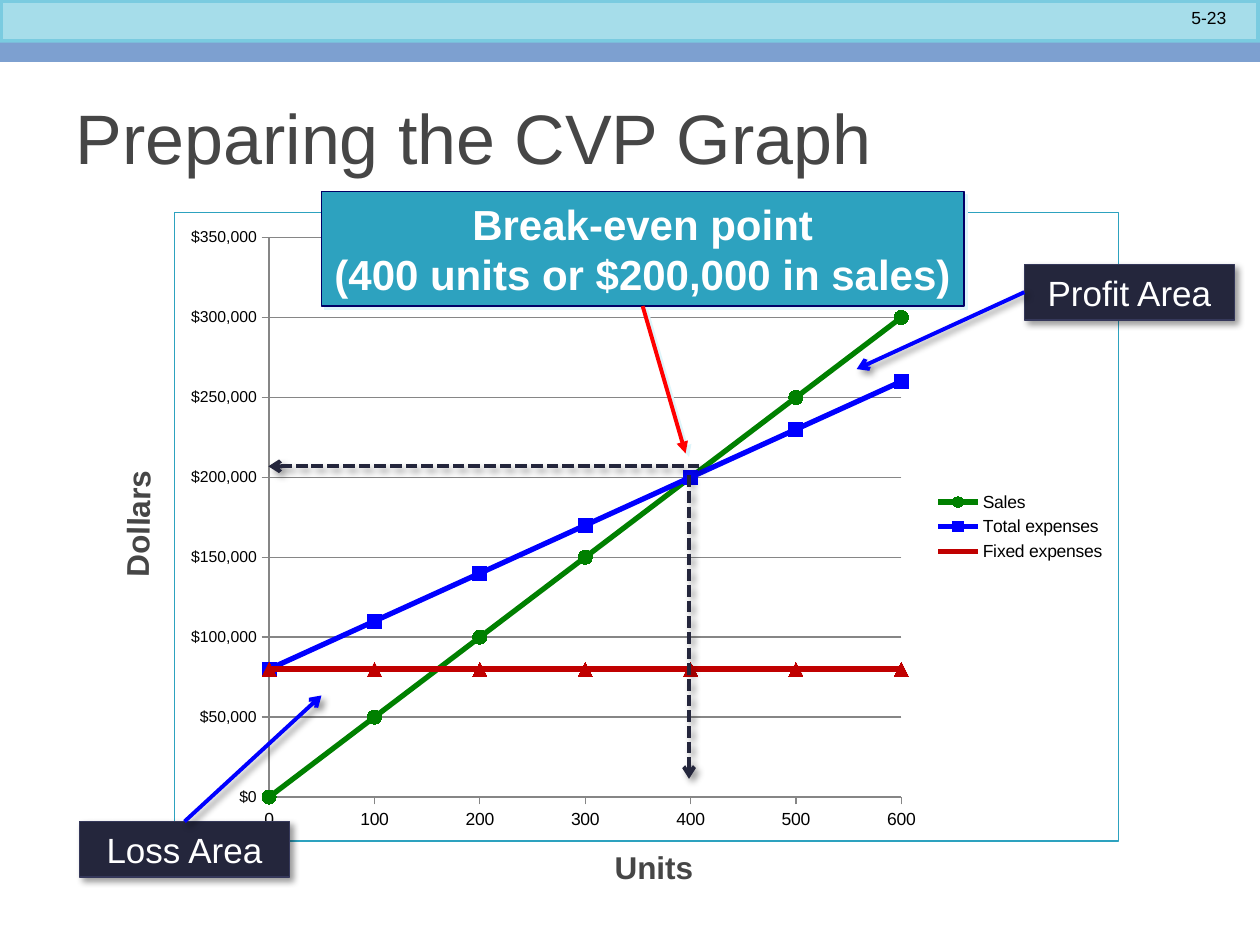
from dataclasses import dataclass

from lxml.etree import SubElement
from pptx import Presentation
from pptx.chart.data import CategoryChartData
from pptx.dml.color import RGBColor
from pptx.enum.chart import XL_CHART_TYPE, XL_LEGEND_POSITION, XL_MARKER_STYLE, XL_TICK_MARK
from pptx.enum.dml import MSO_LINE
from pptx.enum.shapes import MSO_CONNECTOR, MSO_SHAPE
from pptx.enum.text import MSO_ANCHOR, PP_ALIGN
from pptx.oxml import parse_xml
from pptx.oxml.ns import nsdecls, qn
from pptx.util import Cm, Pt


@dataclass(frozen=True)
class Theme:
    """Colours, font and type sizes of the slide."""

    font: str = "Arial"
    title_size: int = 40
    callout_size: int = 24
    area_size: int = 20
    axis_title_size: int = 18
    small_size: int = 10
    value_size: int = 9
    black: str = "000000"
    white: str = "FFFFFF"
    text: str = "464646"
    header: str = "A6DDEA"
    header_border: str = "7ACBE0"
    band: str = "7DA0D0"
    teal: str = "2DA2BF"
    callout_border: str = "000066"
    dark: str = "24263C"
    dark_border: str = "35385A"
    grid: str = "868686"
    sales: str = "008000"
    expenses: str = "0000FF"
    fixed: str = "C00000"
    pointer: str = "FF0000"
    glow: tuple = ("DEF5FA", 100, 0, 2.8)
    drop: tuple = ("000000", 40, 4, 3)


def colour(value):
    """Turn a hex string into a colour."""
    return RGBColor.from_string(value)


def apply(target, values):
    """Set each attribute named in values on target."""
    for name, value in values.items():
        setattr(target, name, value)


class SlideBuilder:
    """Adds styled elements to one slide."""

    def __init__(self, slide, theme):
        """Keep the slide and its theme."""
        self.slide = slide
        self.theme = theme

    def style_text(self, frame, text, size, shade, bold=False, align=PP_ALIGN.LEFT, wrap=True):
        """Write text into a frame with one format."""
        apply(frame, {"text": text, "word_wrap": wrap, "vertical_anchor": MSO_ANCHOR.MIDDLE})
        for paragraph in frame.paragraphs:
            paragraph.alignment = align
            for run in paragraph.runs:
                apply(run.font, {"name": self.theme.font, "size": Pt(size), "bold": bold})
                run.font.color.rgb = colour(shade)

    def style_line(self, line, shade, width):
        """Give a line its colour and width."""
        line.color.rgb = colour(shade)
        line.width = Pt(width)

    def style_shadow(self, shape, shadow=None):
        """Replace the theme shadow by the given one, or by none."""
        effects = SubElement(shape._element.spPr, qn("a:effectLst"))
        if shadow:
            shade, alpha, blur, distance = shadow
            outer = SubElement(effects, qn("a:outerShdw"), blurRad=str(Pt(blur)),
                               dist=str(Pt(distance)), dir="2700000", algn="tl", rotWithShape="0")
            fill = SubElement(outer, qn("a:srgbClr"), val=shade)
            SubElement(fill, qn("a:alpha"), val=str(alpha * 1000))

    def title(self, text, box):
        """Place and format the title placeholder."""
        title = self.slide.shapes.title
        apply(title, dict(zip(("left", "top", "width", "height"), map(Cm, box))))
        self.style_text(title.text_frame, text, self.theme.title_size, self.theme.text)

    def rectangle(self, box, fill, border=None, width=0.75, shadow=None):
        """Add a filled rectangle."""
        shape = self.slide.shapes.add_shape(MSO_SHAPE.RECTANGLE, *map(Cm, box))
        shape.fill.solid()
        shape.fill.fore_color.rgb = colour(fill)
        if border:
            self.style_line(shape.line, border, width)
        else:
            shape.line.fill.background()
        self.style_shadow(shape, shadow)
        return shape

    def text(self, text, box, size, shade, rotation=0, **style):
        """Add a text box."""
        shape = self.slide.shapes.add_textbox(*map(Cm, box))
        shape.rotation = rotation
        self.style_text(shape.text_frame, text, size, shade, **style)

    def arrow(self, start, end, shade, head="arrow", shadow=None, dash=None, source=None, site=0):
        """Add an arrow, joined to a source shape if there is one."""
        connector = self.slide.shapes.add_connector(MSO_CONNECTOR.STRAIGHT, *map(Cm, start + end))
        if source is not None:
            connector.begin_connect(source, site)
        self.style_line(connector.line, shade, 2.25)
        if dash:
            connector.line.dash_style = dash
        SubElement(connector.line._get_or_add_ln(), qn("a:tailEnd"), type=head)
        self.style_shadow(connector, shadow)

    def area_label(self, text, left, top, start, end, site):
        """Add a dark label with an arrow to its area."""
        theme = self.theme
        label = self.rectangle((left, top, 4.24, 1.12), theme.dark, theme.dark_border,
                               shadow=theme.drop)
        self.style_text(label.text_frame, text, theme.area_size, theme.white, align=PP_ALIGN.CENTER)
        self.arrow(start, end, theme.expenses, shadow=theme.drop, source=label, site=site)

    def line_chart(self, box, categories, series):
        """Add the line chart with its axes and legend."""
        theme = self.theme
        data = CategoryChartData()
        data.categories = categories
        for name, values, _, _ in series:
            data.add_series(name, values)
        chart = self.slide.shapes.add_chart(XL_CHART_TYPE.LINE_MARKERS, *map(Cm, box), data).chart
        apply(chart, {"has_title": False, "has_legend": True})
        apply(chart.font, {"name": theme.font, "size": Pt(theme.small_size)})
        chart.font.color.rgb = colour(theme.black)
        chart.plots[0].vary_by_categories = False
        for line, (_, _, shade, marker) in zip(chart.plots[0].series, series):
            line.smooth = False
            self.style_line(line.format.line, shade, 3)
            apply(line.marker, {"style": marker, "size": 8})
            line.marker.format.fill.solid()
            line.marker.format.fill.fore_color.rgb = colour(shade)
            line.marker.format.line.color.rgb = colour(shade)
        value_axis = chart.value_axis
        apply(value_axis, {"minimum_scale": 0, "maximum_scale": 350000, "major_unit": 50000,
                           "has_major_gridlines": True})
        apply(value_axis.tick_labels, {"number_format": '"$"#,##0', "number_format_is_linked": False})
        value_axis.tick_labels.font.size = Pt(theme.value_size)
        value_axis._element.find(qn("c:majorUnit")).addprevious(
            parse_xml(f'<c:crossBetween {nsdecls("c")} val="midCat"/>'))
        self.style_line(value_axis.major_gridlines.format.line, theme.grid, 0.75)
        for axis in (value_axis, chart.category_axis):
            axis.major_tick_mark = XL_TICK_MARK.OUTSIDE
            self.style_line(axis.format.line, theme.grid, 0.75)
        apply(chart.legend, {"position": XL_LEGEND_POSITION.RIGHT, "include_in_layout": False})
        chart.legend._element.find(qn("c:legendPos")).addnext(parse_xml(
            f'<c:legendEntry {nsdecls("c")}><c:idx val="2"/><c:delete val="1"/></c:legendEntry>'))
        self.chart_frame(chart, {"x": 0.1, "y": 0.04, "w": 0.67, "h": 0.89})

    def chart_frame(self, chart, plot_box):
        """Fix the plot area and give the chart its fill and border."""
        theme = self.theme
        plot_area = chart._chartSpace.chart.plotArea
        for old in plot_area.findall(qn("c:layout")):
            plot_area.remove(old)
        sizes = "".join(f'<c:{key} val="{value}"/>' for key, value in plot_box.items())
        plot_area.insert(0, parse_xml(
            f'<c:layout {nsdecls("c")}><c:manualLayout><c:layoutTarget val="inner"/>'
            f'<c:xMode val="edge"/><c:yMode val="edge"/>{sizes}</c:manualLayout></c:layout>'))
        chart._chartSpace.chart.addnext(parse_xml(
            f'<c:spPr {nsdecls("c", "a")}><a:solidFill><a:srgbClr val="{theme.white}"/></a:solidFill>'
            f'<a:ln w="{Pt(0.75)}"><a:solidFill><a:srgbClr val="{theme.teal}"/></a:solidFill></a:ln></c:spPr>'))


def main():
    """Build and save the slide."""
    theme = Theme()
    presentation = Presentation()
    apply(presentation, {"slide_width": Cm(25.4), "slide_height": Cm(19.05)})
    builder = SlideBuilder(presentation.slides.add_slide(presentation.slide_layouts[5]), theme)

    builder.rectangle((0, 0, 25.4, 0.86), theme.header, theme.header_border, 4)
    builder.rectangle((0, 1.02, 25.4, 0.23), theme.band)
    builder.rectangle((0, 0.86, 25.4, 0.25), theme.band)
    builder.text("5-23", (21.59, 0, 3.38, 0.69), theme.small_size, theme.black, align=PP_ALIGN.RIGHT)
    builder.title("Preparing the CVP Graph", (1.27, 1.27, 22.86, 2.97))

    units = range(0, 700, 100)
    builder.line_chart((3.51, 4.27, 19.05, 12.7), [str(unit) for unit in units], [
        ("Sales", [500 * unit for unit in units], theme.sales, XL_MARKER_STYLE.CIRCLE),
        ("Total expenses", [80000 + 300 * unit for unit in units], theme.expenses,
         XL_MARKER_STYLE.SQUARE),
        ("Series 3", [80000 for _ in units], theme.fixed, XL_MARKER_STYLE.TRIANGLE),
        ("Fixed expenses", [0], theme.fixed, XL_MARKER_STYLE.NONE),
    ])

    callout = builder.rectangle((6.48, 3.86, 12.95, 2.31), theme.teal, theme.callout_border, 1,
                                theme.glow)
    builder.style_text(callout.text_frame, "Break-even point\v(400 units or $200,000 in sales)",
                       theme.callout_size, theme.white, True, PP_ALIGN.CENTER, False)
    builder.arrow((12.95, 6.17), (13.82, 9.14), theme.pointer, "triangle", theme.glow,
                  source=callout, site=2)
    axis_title = {"size": theme.axis_title_size, "shade": theme.text, "bold": True}
    builder.text("Units", (12.14, 16.97, 2.11, 1.02), wrap=False, **axis_title)
    builder.text("Dollars", (1.35, 9.96, 2.84, 1.02), rotation=271, **axis_title)
    for start, end in (((13.89, 9.58), (13.89, 15.7)), ((14.1, 9.4), (5.41, 9.4))):
        builder.arrow(start, end, theme.dark, shadow=theme.drop, dash=MSO_LINE.SQUARE_DOT)
    builder.area_label("Loss Area", 1.6, 16.56, (3.72, 16.56), (6.48, 14.02), 0)
    builder.area_label("Profit Area", 20.65, 5.33, (20.65, 5.89), (17.27, 7.44), 1)
    presentation.save("out.pptx")


if __name__ == "__main__":
    main()
